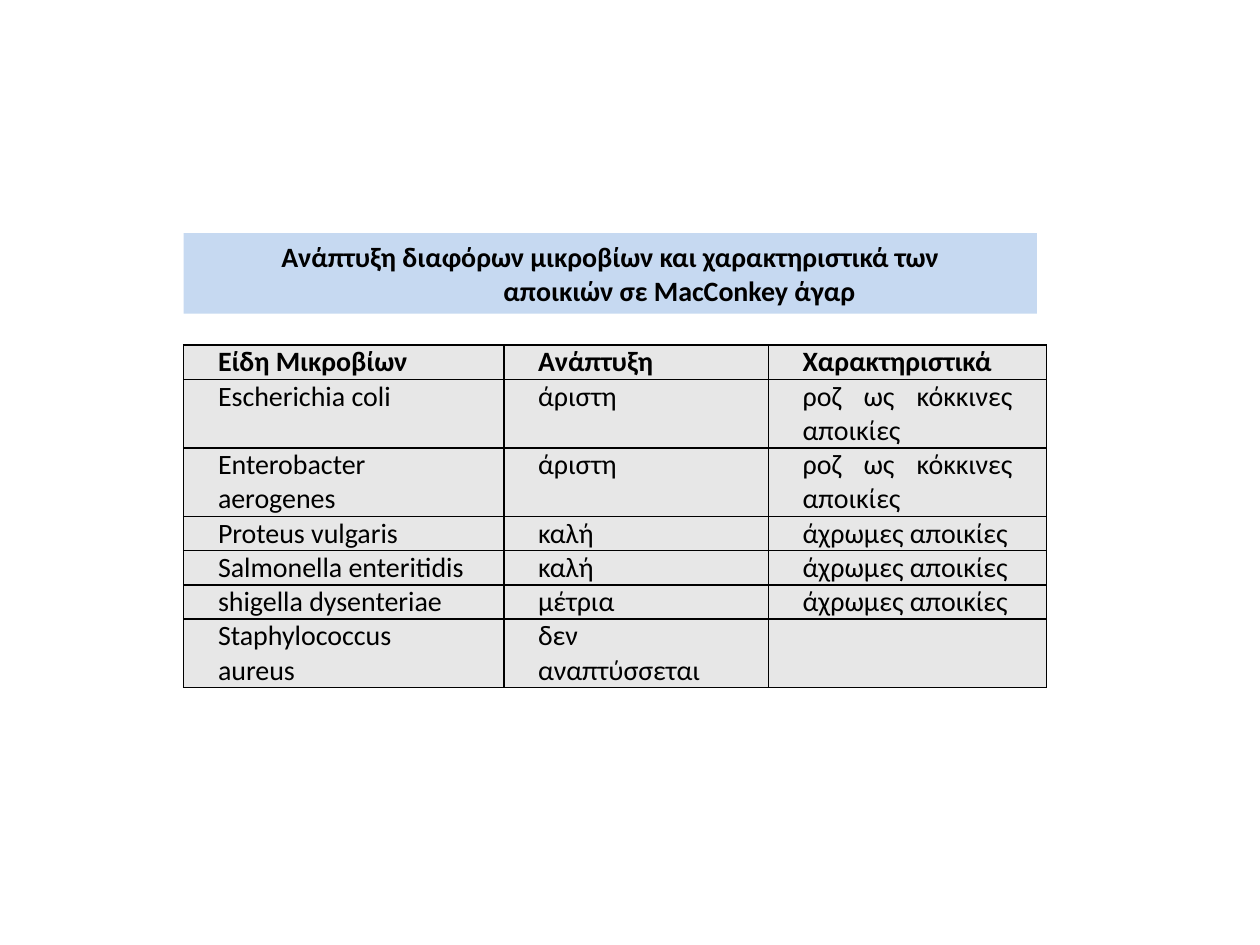
from dataclasses import dataclass

from lxml import etree
from pptx import Presentation
from pptx.dml.color import RGBColor
from pptx.enum import text
from pptx.oxml.ns import qn
from pptx.util import Pt

COLORS = {"ink": "000000", "heading": "C6D9F1", "cell": "E7E7E7"}
LINE = 19.2  # height of one line of table text
COLUMN_WIDTHS = (182.9, 151.2, 159.1)
CELL_INDENT = 14.4


@dataclass
class Line:
    words: str
    indent: float = 0


@dataclass
class Row:
    cells: tuple[str, str, str]
    lines: int = 1
    bold: bool = False


HEADING = (
    Line("Ανάπτυξη διαφόρων μικροβίων και χαρακτηριστικά των"),
    Line("αποικιών σε MacConkey άγαρ", indent=79),
)
ROWS = (
    Row(("Είδη Μικροβίων", "Ανάπτυξη", "Xαρακτηριστικά"), bold=True),
    Row(("Escherichia coli", "άριστη", "ροζ ως κόκκινες αποικίες"), lines=2),
    Row(("Enterobacter aerogenes", "άριστη", "ροζ ως κόκκινες αποικίες"), lines=2),
    Row(("Proteus vulgaris", "καλή", "άχρωμες αποικίες")),
    Row(("Salmonella enteritidis", "καλή", "άχρωμες αποικίες")),
    Row(("shigella dysenteriae", "μέτρια", "άχρωμες αποικίες")),
    Row(("Staphylococcus aureus", "δεν αναπτύσσεται", ""), lines=2),
)


def apply(target, values: dict) -> None:
    for name, value in values.items():
        setattr(target, name, value)


def fill_with(target, color: str) -> None:
    target.fill.solid()
    target.fill.fore_color.rgb = RGBColor.from_string(COLORS[color])


def write(para, words: str, bold: bool, align, left: float = 0, right: float = 0) -> None:
    para.alignment = align
    properties = para._p.get_or_add_pPr()
    for name, value in {"marL": left, "marR": right, "indent": 0}.items():
        properties.set(name, str(int(Pt(value))))
    span = para.add_run()
    span.text = words
    apply(span.font, {"name": "Calibri", "size": Pt(16), "bold": bold})
    span.font.color.rgb = RGBColor.from_string(COLORS["ink"])


def draw_borders(cell) -> None:
    properties = cell._tc.get_or_add_tcPr()
    for side in ("lnL", "lnR", "lnT", "lnB"):
        border = etree.SubElement(properties, qn(f"a:{side}"), w=str(int(Pt(1))))
        paint = etree.SubElement(border, qn("a:solidFill"))
        etree.SubElement(paint, qn("a:srgbClr"), val=COLORS["ink"])


def draw_heading(page) -> None:
    box = page.shapes.title
    apply(box, {"left": Pt(105), "top": Pt(133.2), "width": Pt(487.5), "height": Pt(46.1)})
    fill_with(box, "heading")
    frame = box.text_frame
    apply(frame, {"word_wrap": True, "auto_size": text.MSO_AUTO_SIZE.NONE,
                  "vertical_anchor": text.MSO_ANCHOR.MIDDLE})
    for index, line in enumerate(HEADING):
        para = frame.add_paragraph() if index else frame.paragraphs[0]
        write(para, line.words, True, text.PP_ALIGN.CENTER, line.indent)


def draw_table(page) -> None:
    height = LINE * sum(row.lines for row in ROWS)
    table = page.shapes.add_table(len(ROWS), len(COLUMN_WIDTHS), Pt(105), Pt(197.2),
                                  Pt(sum(COLUMN_WIDTHS)), Pt(height)).table
    apply(table, {"first_row": False, "horz_banding": False})
    for column, width in zip(table.columns, COLUMN_WIDTHS):
        column.width = Pt(width)
    for table_row, row in zip(table.rows, ROWS):
        table_row.height = Pt(LINE * row.lines)
        for cell, words in zip(table_row.cells, row.cells):
            apply(cell, {"margin_left": Pt(5.2), "margin_right": Pt(5.2),
                         "margin_top": 0, "margin_bottom": 0})
            draw_borders(cell)
            fill_with(cell, "cell")
            if words:
                write(cell.text_frame.paragraphs[0], words, row.bold,
                      text.PP_ALIGN.JUSTIFY, CELL_INDENT, CELL_INDENT)


def main() -> None:
    deck = Presentation()
    apply(deck, {"slide_width": Pt(720), "slide_height": Pt(540)})
    page = deck.slides.add_slide(deck.slide_layouts[5])  # title only
    draw_table(page)
    draw_heading(page)
    deck.save("out.pptx")


if __name__ == "__main__":
    main()
